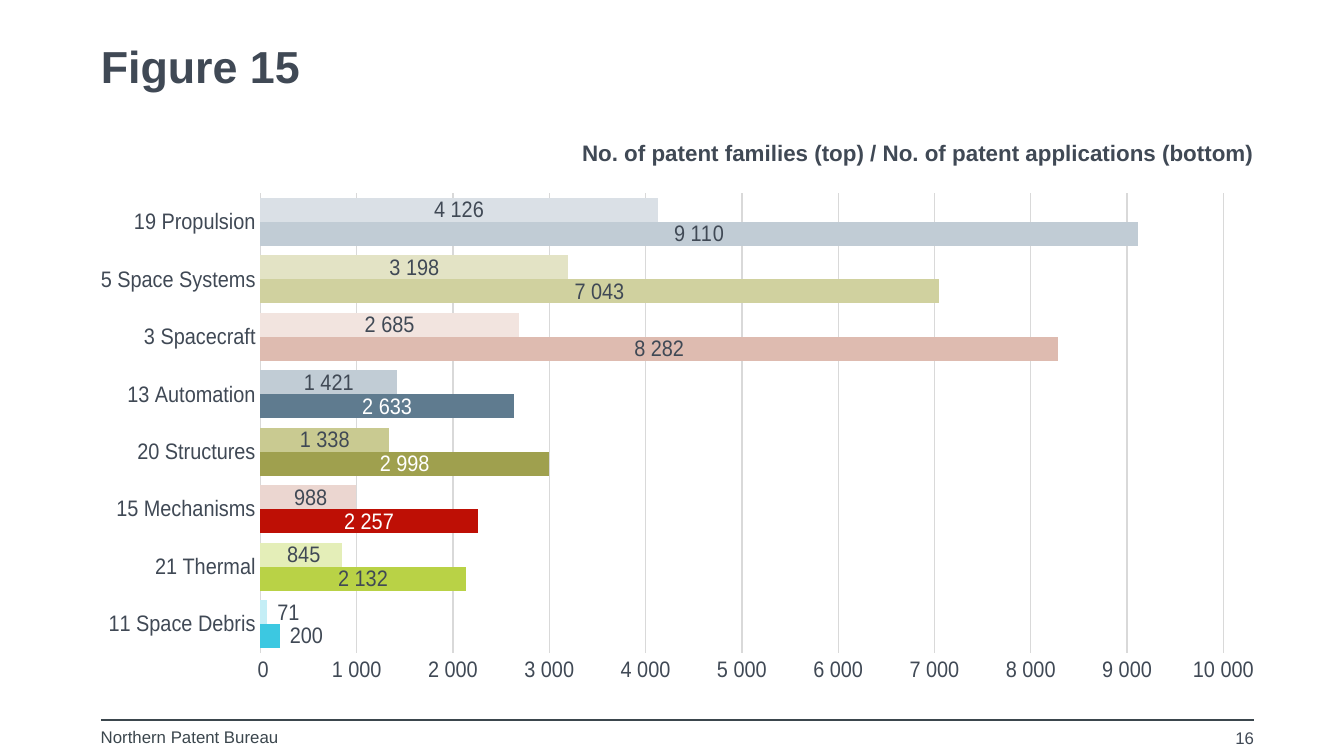
from lxml import etree
from pptx import Presentation
from pptx.chart.data import CategoryChartData
from pptx.dml.color import RGBColor
from pptx.enum.chart import XL_CHART_TYPE, XL_LABEL_POSITION, XL_TICK_MARK
from pptx.enum.shapes import MSO_CONNECTOR
from pptx.enum.text import PP_ALIGN
from pptx.oxml import parse_xml
from pptx.oxml.ns import nsdecls, qn
from pptx.util import Pt

LEFT, RIGHT = PP_ALIGN.LEFT, PP_ALIGN.RIGHT
CENTER, OUTSIDE = XL_LABEL_POSITION.CENTER, XL_LABEL_POSITION.OUTSIDE_END
NO_TICK = XL_TICK_MARK.NONE
BAR_CLUSTERED = XL_CHART_TYPE.BAR_CLUSTERED
STRAIGHT = MSO_CONNECTOR.STRAIGHT
FONT, TEXT, RULE, GRID, WHITE = "Arial", "404955", "3B464D", "D9D9D9", "FFFFFF"
NUMBER_FORMAT = "#\\ ##0"
MARGIN, CONTENT_WIDTH, RULE_TOP = 54, 617.76, 385.8

# Category, applications, families, their bar colours, colour of the applications label
FIELDS = [
    ("11 Space Debris", 200, 71, "3CC8E1", "C4EEF6", TEXT),
    ("21 Thermal", 2132, 845, "B9D246", "E4EEB8", TEXT),
    ("15 Mechanisms", 2257, 988, "BE0F05", "EBD6D0", WHITE),
    ("20 Structures", 2998, 1338, "9FA04E", "C9CA91", WHITE),
    ("13 Automation", 2633, 1421, "5F7B8F", "C1CCD5", WHITE),
    ("3 Spacecraft", 8282, 2685, "DEBBB0", "F2E4DF", TEXT),
    ("5 Space Systems", 7043, 3198, "D0D19F", "E3E3C5", TEXT),
    ("19 Propulsion", 9110, 4126, "C1CCD5", "DAE0E6", TEXT),
]
CATEGORIES, APPLICATIONS, FAMILIES, DARK, LIGHT, LABEL_COLORS = zip(*FIELDS)
# Name, values, series colour, bar colours, label colours
SERIES = [
    ("Series 1", APPLICATIONS, "5F7B8F", DARK, LABEL_COLORS),
    ("Series 2", FAMILIES, "C1CCD5", LIGHT, [TEXT] * len(FIELDS)),
]
CHART_BOX = (MARGIN, 77.6, CONTENT_WIDTH, 294.4)
PLOT_LAYOUT = {"x": 0.06, "y": 0.088, "w": 0.94, "h": 0.837}

# Text, box, size, bold, colour, alignment, paragraph format
TEXTS = [
    ("Figure 15", (MARGIN, 21.6, CONTENT_WIDTH, 31.68), 24, True, TEXT, LEFT,
     {"line_spacing": Pt(28)}),
    ("No. of patent families (top) / No. of patent applications (bottom)",
     (311.04, 74.5, 360.72, 14.4), 12, True, TEXT, RIGHT, {"space_after": Pt(3)}),
    ("Northern Patent Bureau", (MARGIN, 389.5, 122.4, 13.68), 9, False, RULE, LEFT, {}),
    ("16", (504, 389.9, 167.76, 12.96), 9, False, TEXT, RIGHT, {}),
]


def color(value):
    return RGBColor.from_string(value)


def set_attributes(target, values):
    for name, value in values.items():
        setattr(target, name, value)


def style_font(font, size, value=TEXT, bold=False):
    set_attributes(font, {"name": FONT, "size": Pt(size), "bold": bold})
    font.color.rgb = color(value)


def paint(element, value):
    element.format.fill.solid()
    element.format.fill.fore_color.rgb = color(value)


def add_text(slide, text, box, size, bold, value, alignment, paragraph_format):
    frame = slide.shapes.add_textbox(*map(Pt, box)).text_frame
    set_attributes(frame, {"margin_left": 0, "margin_right": 0, "margin_top": 0,
                           "margin_bottom": 0, "word_wrap": True})
    paragraph = frame.paragraphs[0]
    set_attributes(paragraph, {"alignment": alignment, **paragraph_format})
    run = paragraph.add_run()
    run.text = text
    style_font(run.font, size, value, bold)


def add_footer_rule(slide):
    connector = slide.shapes.add_connector(
        STRAIGHT, Pt(MARGIN), Pt(RULE_TOP), Pt(MARGIN + CONTENT_WIDTH), Pt(RULE_TOP))
    connector.line.color.rgb = color(RULE)
    connector.line.width = Pt(0.75)
    etree.SubElement(connector._element.spPr, qn("a:effectLst"))


def set_plot_layout(chart):
    plot_area = chart._chartSpace.chart.plotArea
    for layout in plot_area.findall(qn("c:layout")):
        plot_area.remove(layout)
    sizes = "".join(f'<c:{key} val="{value}"/>' for key, value in PLOT_LAYOUT.items())
    plot_area.insert(0, parse_xml(
        f'<c:layout {nsdecls("c")}><c:manualLayout><c:layoutTarget val="inner"/>'
        f'<c:xMode val="edge"/><c:yMode val="edge"/>{sizes}</c:manualLayout></c:layout>'))


def style_axes(chart):
    for axis in (chart.category_axis, chart.value_axis):
        set_attributes(axis, {"major_tick_mark": NO_TICK, "minor_tick_mark": NO_TICK})
        axis.format.line.fill.background()
        style_font(axis.tick_labels.font, 12)
    value_axis = chart.value_axis
    set_attributes(value_axis, {"minimum_scale": 0, "maximum_scale": 10000,
                                "major_unit": 1000, "has_major_gridlines": True})
    set_attributes(value_axis.tick_labels,
                   {"number_format": NUMBER_FORMAT, "number_format_is_linked": False})
    grid = value_axis.major_gridlines.format.line
    grid.color.rgb = color(GRID)
    grid.width = Pt(0.75)


def style_series(series, series_color, bar_colors, label_colors):
    paint(series, series_color)
    labels = series.data_labels
    set_attributes(labels, {"show_value": True, "position": CENTER,
                            "number_format": NUMBER_FORMAT,
                            "number_format_is_linked": False})
    style_font(labels.font, 12)
    for index, (bar_color, label_color) in enumerate(zip(bar_colors, label_colors)):
        point = series.points[index]
        paint(point, bar_color)
        if index == 0 or label_color != TEXT:
            style_font(point.data_label.font, 12, label_color)
            point.data_label.position = CENTER if index else OUTSIDE


def add_patent_chart(slide):
    data = CategoryChartData(number_format=NUMBER_FORMAT)
    data.categories = CATEGORIES
    for name, values, *_ in SERIES:
        data.add_series(name, values)
    chart = slide.shapes.add_chart(BAR_CLUSTERED, *map(Pt, CHART_BOX), data).chart
    set_attributes(chart, {"has_legend": False, "has_title": False})
    style_font(chart.font, 10)
    plot = chart.plots[0]
    set_attributes(plot, {"gap_width": 40, "overlap": 0, "vary_by_categories": False})
    set_plot_layout(chart)
    style_axes(chart)
    for series, (_, _, *colors) in zip(plot.series, SERIES):
        style_series(series, *colors)


def main():
    presentation = Presentation()
    set_attributes(presentation, {"slide_width": Pt(720), "slide_height": Pt(405)})
    slide = presentation.slides.add_slide(presentation.slide_layouts[6])
    add_footer_rule(slide)
    add_patent_chart(slide)
    for text in TEXTS:
        add_text(slide, *text)
    presentation.save("out.pptx")


if __name__ == "__main__":
    main()
